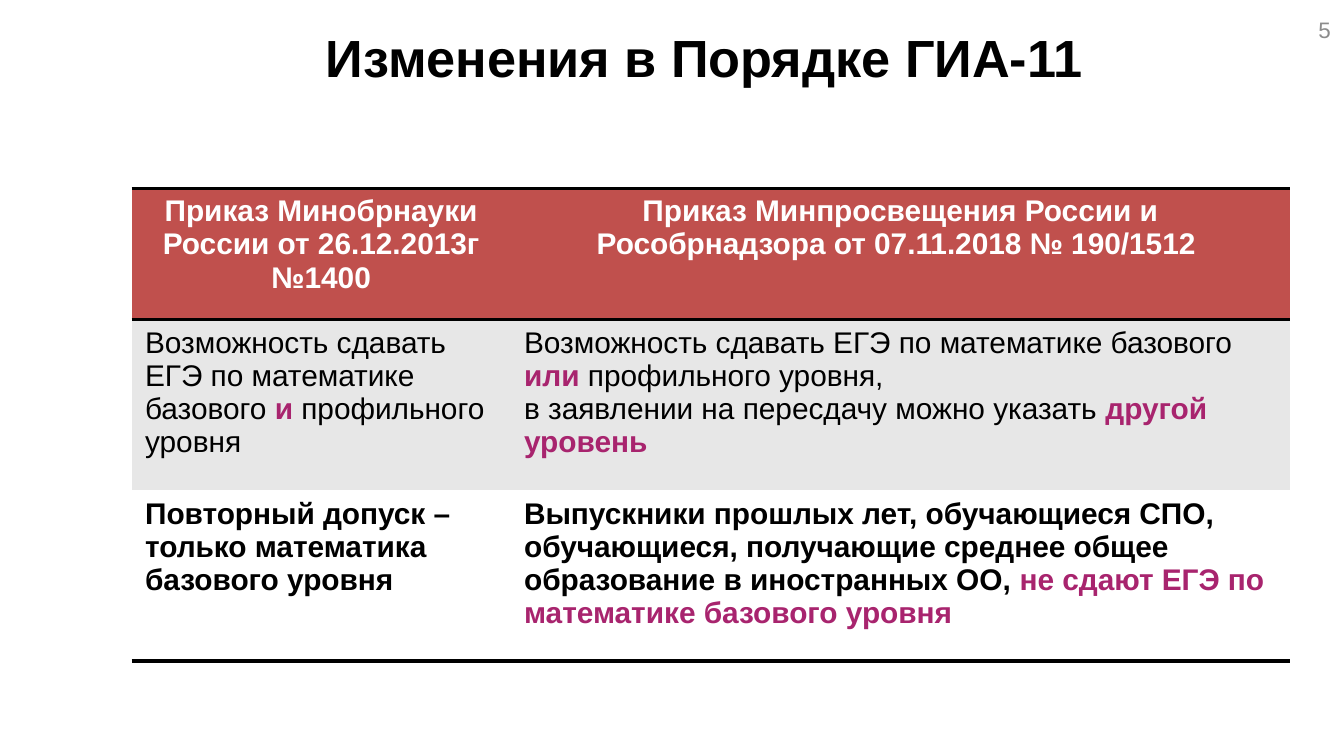
from lxml.etree import SubElement
from pptx import Presentation
from pptx.dml.color import RGBColor
from pptx.enum.text import MSO_ANCHOR, MSO_AUTO_SIZE, PP_ALIGN
from pptx.oxml import parse_xml
from pptx.oxml.ns import nsdecls, qn
from pptx.util import Inches, Pt

BLACK = RGBColor(0x00, 0x00, 0x00)
WHITE = RGBColor(0xFF, 0xFF, 0xFF)
RED = RGBColor(0xC0, 0x50, 0x4D)
PLUM = RGBColor(0xA8, 0x24, 0x6E)
PALE = RGBColor(0xE7, 0xE7, 0xE7)
GREY = RGBColor(0x8C, 0x8C, 0x8C)
FONT = "Arial"
NO_GRID = "{2D5ABB26-0587-4C30-8999-92F81FD0307C}"

HEAD = [
    [[("Приказ Минобрнауки России от 26.12.2013г №1400", WHITE, True)]],
    [[("Приказ Минпросвещения России и Рособрнадзора от 07.11.2018 № 190/1512 ", WHITE, True)]],
]
LEVELS = [
    [[("Возможность сдавать ЕГЭ по математике базового ", BLACK, False),
      ("и", PLUM, True),
      (" профильного уровня", BLACK, False)]],
    [[("Возможность сдавать ЕГЭ по математике базового ", BLACK, False),
      ("или", PLUM, True),
      (" профильного уровня,", BLACK, False)],
     [("в заявлении на пересдачу можно указать ", BLACK, False),
      ("другой уровень", PLUM, True)]],
]
RETAKE = [
    [[("Повторный допуск –", BLACK, True)],
     [("только математика базового уровня", BLACK, True)]],
    [[("Выпускники прошлых лет, обучающиеся СПО, обучающиеся, получающие "
       "среднее общее образование в иностранных ОО, ", BLACK, True),
      ("не сдают ЕГЭ по математике базового уровня", PLUM, True)]],
]
ROWS = [
    (HEAD, 0.98, RED, PP_ALIGN.CENTER, "TB"),
    (LEVELS, 1.27, PALE, PP_ALIGN.LEFT, "T"),
    (RETAKE, 1.27, WHITE, PP_ALIGN.LEFT, "B"),
]
COLS = [2.82, 5.8]


def write(frame, paras, size, align):
    frame.word_wrap = True
    for i, runs in enumerate(paras):
        para = frame.paragraphs[0] if i == 0 else frame.add_paragraph()
        para.alignment = align
        for text, color, bold in runs:
            run = para.add_run()
            run.text = text
            run.font.name = FONT
            run.font.size = Pt(size)
            run.font.bold = bold
            run.font.color.rgb = color


def rule(cell, sides):
    props = cell._tc.get_or_add_tcPr()
    for i, side in enumerate("LRTB"):
        line = parse_xml(f'<a:ln{side} {nsdecls("a")} w="{Pt(2)}"/>')
        if side in sides:
            fill = SubElement(line, qn("a:solidFill"))
            SubElement(fill, qn("a:srgbClr"), val=str(BLACK))
        else:
            SubElement(line, qn("a:noFill"))
        props.insert(i, line)


def add_title(slide, x, y, w, h):
    title = slide.shapes.title
    title.left, title.top = Inches(x), Inches(y)
    title.width, title.height = Inches(w), Inches(h)
    frame = title.text_frame
    frame.auto_size = MSO_AUTO_SIZE.NONE
    frame.vertical_anchor = MSO_ANCHOR.TOP
    write(frame, [[("Изменения в Порядке ГИА-11", BLACK, True)]], 28, PP_ALIGN.CENTER)


def add_number(slide, x, y, w, h):
    box = slide.shapes.add_textbox(Inches(x), Inches(y), Inches(w), Inches(h))
    box.text_frame.vertical_anchor = MSO_ANCHOR.MIDDLE
    write(box.text_frame, [[("5", GREY, False)]], 12, PP_ALIGN.RIGHT)


def add_orders(slide, x, y, w, h):
    shape = slide.shapes.add_table(
        len(ROWS), len(COLS), Inches(x), Inches(y), Inches(w), Inches(h))
    table = shape.table
    table.horz_banding = False
    table._tbl.tblPr.find(qn("a:tableStyleId")).text = NO_GRID
    for col, part in zip(table.columns, COLS):
        col.width = Inches(w * part / sum(COLS))
    for row, (texts, tall, color, align, sides) in zip(table.rows, ROWS):
        row.height = Inches(tall)
        for cell, paras in zip(row.cells, texts):
            cell.fill.solid()
            cell.fill.fore_color.rgb = color
            write(cell.text_frame, paras, 16, align)
            rule(cell, sides)


def main():
    deck = Presentation()
    deck.slide_width = Inches(10)
    deck.slide_height = deck.slide_width * 9 // 16
    slide = deck.slides.add_slide(deck.slide_layouts[5])
    add_title(slide, 0.71, 0.14, 9.06, 0.98)
    add_number(slide, 7.67, 0.02, 2.33, 0.4)
    add_orders(slide, 0.98, 1.4, 8.62, 3.52)
    deck.save("out.pptx")


if __name__ == "__main__":
    main()
